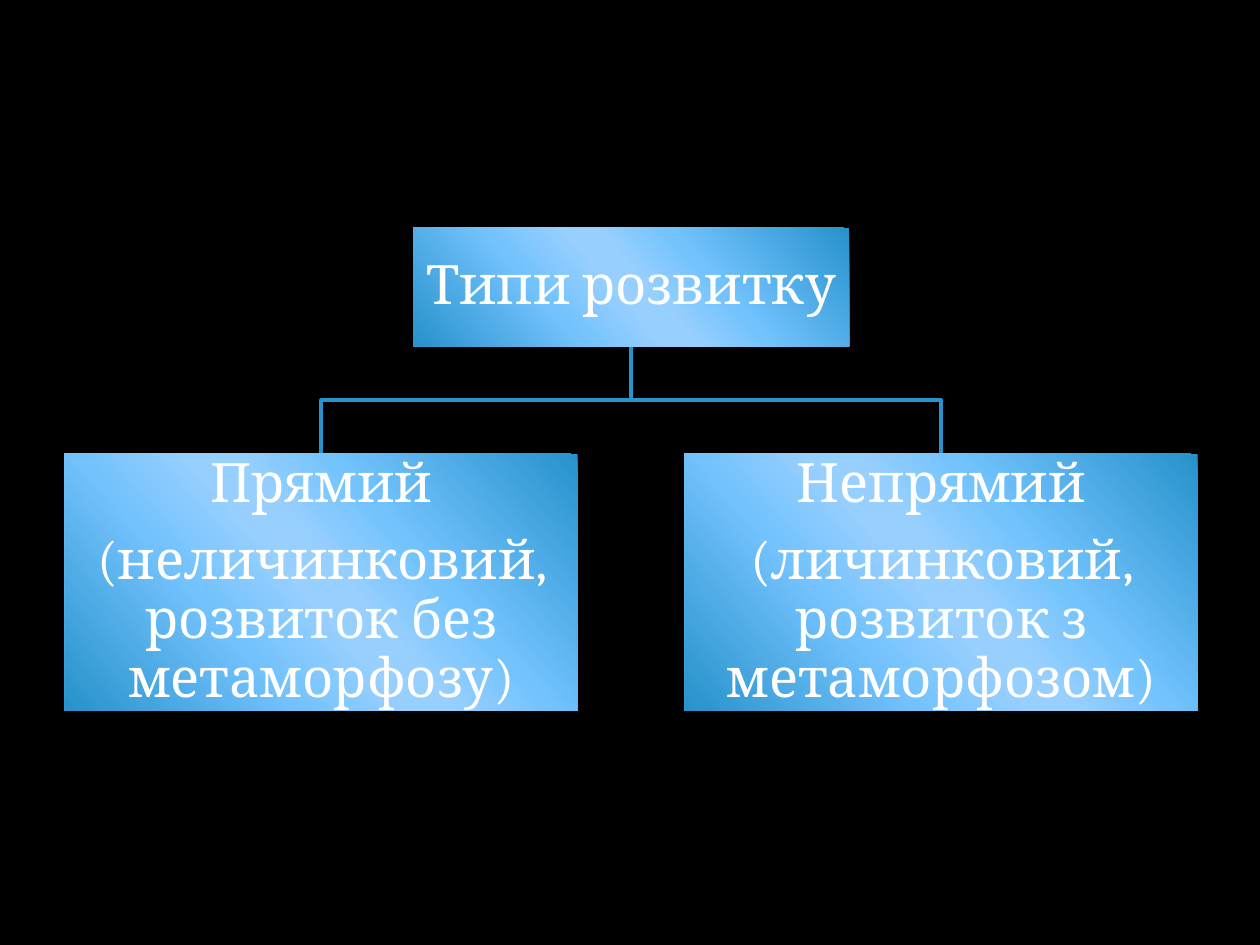
from lxml.etree import SubElement
from pptx import Presentation
from pptx.dml.color import RGBColor
from pptx.enum.shapes import MSO_SHAPE as Shape
from pptx.enum.text import MSO_ANCHOR as Anchor, PP_ALIGN as Align
from pptx.oxml.ns import qn
from pptx.util import Inches, Pt

COLORS = {
    "background": "000000",
    "text": "FFFFFF",
    "edge": "2792CB",
    "start": "71C2FD",
    "middle": "97CFFF",
    "end": "73C2FD",
}
GRADIENT = [(0, "edge"), (33, "start"), (47, "middle"),
            (53, "middle"), (68, "end"), (100, "edge")]


def color(name):
    return RGBColor.from_string(COLORS[name])


def write_text(frame, lines, font="Cambria", size=31, fill="text", margin=0.02):
    """Fill a text frame with centred paragraphs, one for each line."""
    frame.word_wrap = True
    frame.vertical_anchor = Anchor.MIDDLE
    frame.margin_left = frame.margin_right = Inches(margin)
    frame.margin_top = frame.margin_bottom = Inches(margin)
    for index, line in enumerate(lines):
        paragraph = frame.add_paragraph() if index else frame.paragraphs[0]
        paragraph.alignment = Align.CENTER
        paragraph.line_spacing = 0.9
        paragraph.space_after = Pt(11)
        run = paragraph.add_run()
        run.text = line
        run.font.name = font
        run.font.size = Pt(size)
        run.font.color.rgb = color(fill)


class Diagram:
    """Holds the current slide and draws the boxes and branches on it."""

    def __init__(self, slide):
        self.slide = slide
        background = slide.background.fill
        background.solid()
        background.fore_color.rgb = color("background")

    def apply_gradient(self, fill):
        fill.gradient()
        fill.gradient_angle = 221
        stops = fill.gradient_stops
        stop_list = stops[0]._gs.getparent()
        for stop in list(stop_list):
            stop_list.remove(stop)
        for position, name in GRADIENT:
            stop = SubElement(stop_list, qn("a:gs"), pos=str(position * 1000))
            SubElement(stop, qn("a:srgbClr"), val=COLORS[name])

    def box(self, left, top, width, height, lines):
        shape = self.slide.shapes.add_shape(
            Shape.RECTANGLE, Inches(left), Inches(top), Inches(width), Inches(height))
        shape.shadow.inherit = False
        self.apply_gradient(shape.fill)
        shape.line.fill.background()
        write_text(shape.text_frame, lines)

    def branch(self, start_x, start_y, end_x, end_y):
        """Draw an elbow that turns halfway down."""
        middle_y = (start_y + end_y) / 2
        points = [(start_x, middle_y), (end_x, middle_y), (end_x, end_y)]
        builder = self.slide.shapes.build_freeform(Inches(start_x), Inches(start_y))
        builder.add_line_segments(
            [(Inches(x), Inches(y)) for x, y in points], close=False)
        shape = builder.convert_to_shape()
        shape.shadow.inherit = False
        shape.fill.background()
        shape.line.color.rgb = color("edge")
        shape.line.width = Pt(2)


def main():
    presentation = Presentation()
    presentation.slide_width = Inches(10)
    presentation.slide_height = Inches(7.5)
    slide = presentation.slides.add_slide(presentation.slide_layouts[6])
    diagram = Diagram(slide)

    center_x = 5.01
    root_top, root_width, root_height = 1.81, 3.46, 0.94
    child_top, child_width, child_height = 3.6, 4.07, 2.04
    children = [
        (2.55, ["Прямий", "(неличинковий, розвиток без метаморфозу)"]),
        (7.47, ["Непрямий", "(личинковий, розвиток з метаморфозом)"]),
    ]

    for child_x, _ in children:
        diagram.branch(center_x, root_top + root_height, child_x, child_top)
    diagram.box(center_x - root_width / 2, root_top, root_width, root_height,
                ["Типи розвитку"])
    for child_x, lines in children:
        diagram.box(child_x - child_width / 2, child_top, child_width, child_height, lines)

    presentation.save("out.pptx")


if __name__ == "__main__":
    main()
